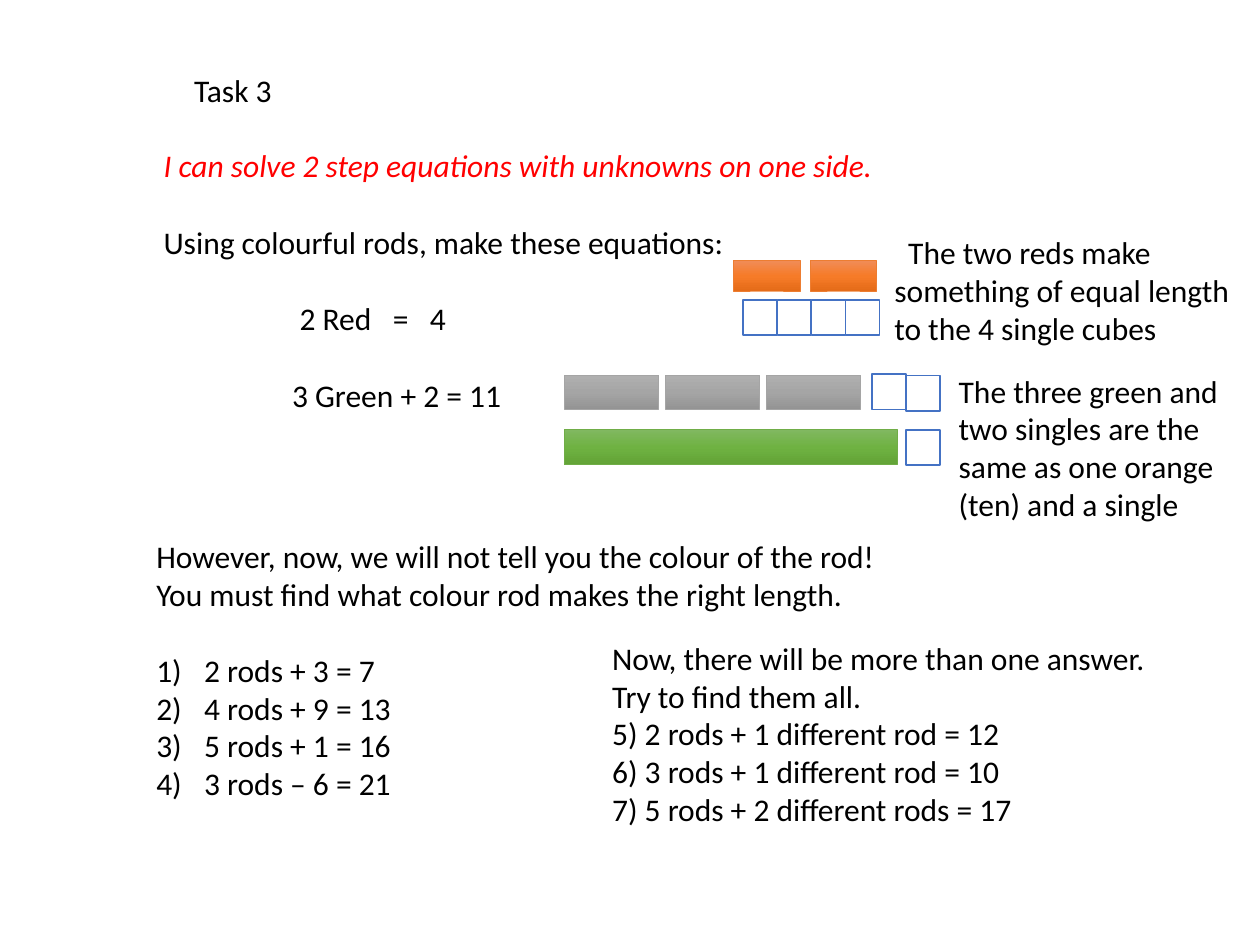
from copy import deepcopy

from lxml import etree
from pptx import Presentation
from pptx import util as u
from pptx.dml import color
from pptx.enum import shapes, text
from pptx.oxml import ns

BLACK, RED, WHITE, BLUE = "000000", "FF0000", "FFFFFF", "4472C4"
ORANGE_ROD = (["F18C57", "F67B28", "E56C19"], "ED7D31")
GREY_ROD = (["AFAFAF", "A5A5A5", "939393"], "A5A5A5")
GREEN_ROD = (["81B861", "6FB242", "62A336"], "70AD47")
LINE_GAP = 22
WIDE_SPACE = "810"


def rgb(value):
    return color.RGBColor.from_string(value)


def place(shape, box):
    for name, value in zip(("left", "top", "width", "height"), box):
        setattr(shape, name, u.Inches(value))


def add_property(paragraph, tag, **values):
    properties = paragraph._p.get_or_add_pPr()
    etree.SubElement(properties, ns.qn(tag), values)


def write(shape, lines, tint=BLACK, italic=False):
    frame = shape.text_frame
    frame_format = {"word_wrap": True, "auto_size": text.MSO_AUTO_SIZE.NONE,
                    "vertical_anchor": text.MSO_ANCHOR.TOP}
    for name, value in frame_format.items():
        setattr(frame, name, value)
    for index, line in enumerate(lines):
        paragraph = frame.paragraphs[0] if index == 0 else frame.add_paragraph()
        paragraph_format = {"alignment": text.PP_ALIGN.LEFT,
                            "space_before": u.Pt(line.get("gap", 0)),
                            "space_after": u.Pt(0)}
        for name, value in paragraph_format.items():
            setattr(paragraph, name, value)
        properties = paragraph._p.get_or_add_pPr()
        properties.set("marL", str(u.Inches(line.get("margin", 0))))
        properties.set("indent", str(u.Inches(line.get("indent", 0))))
        if line.get("numbered"):
            add_property(paragraph, "a:buFont", typeface="+mj-lt")
            add_property(paragraph, "a:buAutoNum", type="arabicParenR")
        else:
            add_property(paragraph, "a:buNone")
        for piece in line["pieces"]:
            run = paragraph.add_run()
            run.text = piece
            run_format = {"size": u.Pt(18), "name": "Calibri", "italic": italic}
            for name, value in run_format.items():
                setattr(run.font, name, value)
            run.font.color.rgb = rgb(tint)
            if piece == " ":
                run._r.get_or_add_rPr().set("spc", WIDE_SPACE)


def add_note(slide, box, lines, **style):
    note = slide.shapes.add_textbox(*map(u.Inches, box))
    write(note, lines, **style)


def add_block(slide, box, outline, weight):
    block = slide.shapes.add_shape(shapes.MSO_SHAPE.RECTANGLE, *map(u.Inches, box))
    block.shadow.inherit = False
    block.line.color.rgb = rgb(outline)
    block.line.width = u.Pt(weight)
    return block


def add_rod(slide, box, tints, outline):
    rod = add_block(slide, box, outline, 0.5)
    rod.fill.gradient()
    rod.fill.gradient_angle = 270
    first = rod._element.spPr.find(".//" + ns.qn("a:gs"))
    first.addnext(deepcopy(first))
    for stop, position, tint in zip(rod.fill.gradient_stops, (0, 0.5, 1), tints):
        stop.position = position
        stop.color.rgb = rgb(tint)


def add_cube(slide, left, top):
    cube = add_block(slide, (left, top, 0.27, 0.28), BLUE, 1)
    cube.fill.solid()
    cube.fill.fore_color.rgb = rgb(WHITE)


def add_rods_and_cubes(slide):
    for i in range(2):
        add_rod(slide, (5.82 + 0.61 * i, 2.07, 0.53, 0.24), *ORANGE_ROD)
    for i in range(4):
        add_cube(slide, 5.9 + 0.27 * i, 2.38)
    for i in range(3):
        add_rod(slide, (4.48 + 0.8 * i, 2.98, 0.75, 0.27), *GREY_ROD)
    add_rod(slide, (4.48, 3.41, 2.64, 0.28), *GREEN_ROD)
    for left, top in ((6.92, 2.97), (7.19, 2.98), (7.19, 3.41)):
        add_cube(slide, left, top)


def main():
    deck = Presentation()
    deck.slide_width, deck.slide_height = u.Inches(10), u.Inches(7.5)
    slide = deck.slides.add_slide(deck.slide_layouts[1])

    title, questions = slide.placeholders
    place(title, (1.44, 0.51, 3, 0.4))
    write(title, [{"pieces": ["Task 3"]}])
    place(questions, (1.14, 4.21, 6.19, 2.83))
    rods = ["2 rods + 3 = 7", "4 rods + 9 = 13", "5 rods + 1 = 16", "3 rods – 6 = 21"]
    write(questions, [
        {"pieces": ["However, now, we will not tell you the colour of the rod! "
                    "You must find what colour rod makes the right length."]},
        *({"pieces": [rod], "margin": 0.38, "indent": -0.38, "numbered": True,
           "gap": 0 if i else LINE_GAP} for i, rod in enumerate(rods))])

    add_note(slide, (1.2, 1.11, 6.57, 0.4),
             [{"pieces": ["I can solve 2 step equations with unknowns on one side."]}],
             tint=RED, italic=True)
    add_note(slide, (1.2, 1.72, 6.27, 1.62), [
        {"pieces": ["Using colourful rods, make these equations:"]},
        {"pieces": ["2 Red", " ", "=", " ", "4"], "margin": 1.08, "gap": LINE_GAP},
        {"pieces": ["3 Green + 2 = 11"], "margin": 1.02, "gap": LINE_GAP}])
    add_rods_and_cubes(slide)
    add_note(slide, (7, 1.8, 3, 1.01), [
        {"pieces": ["The two reds make something of equal length to the 4 single cubes"],
         "indent": 0.11}])
    add_note(slide, (7.51, 2.9, 2.51, 1.31), [
        {"pieces": ["The three green and two singles are the same as one orange "
                    "(ten) and a single"]}])
    add_note(slide, (4.76, 5.02, 4.62, 1.62), [{"pieces": [line]} for line in (
        "Now, there will be more than one answer.",
        "Try to find them all.",
        "5) 2 rods + 1 different rod = 12",
        "6) 3 rods + 1 different rod = 10",
        "7) 5 rods + 2 different rods = 17")])
    deck.save("out.pptx")


if __name__ == "__main__":
    main()
